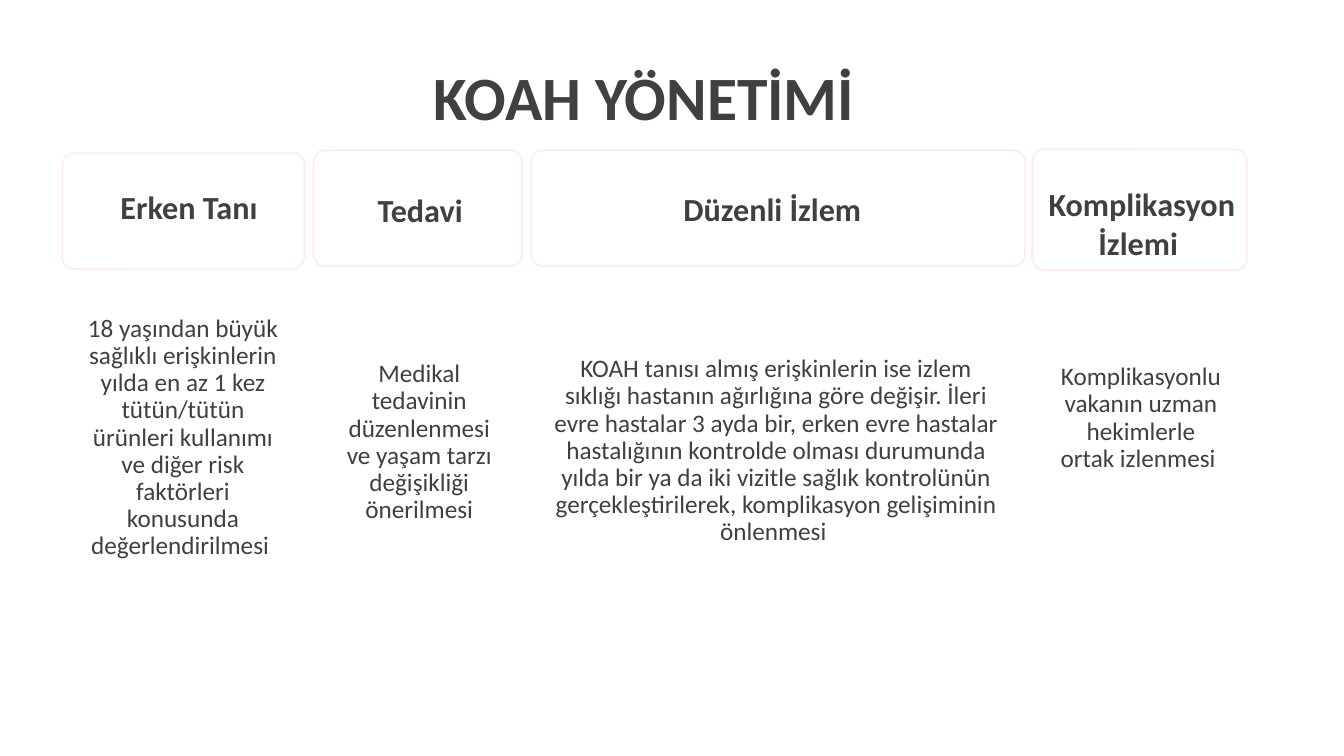
import dataclasses
import typing

import lxml.etree
import pptx
import pptx.dml.color
import pptx.enum.shapes
import pptx.enum.text
import pptx.oxml.ns
import pptx.util

Pt = pptx.util.Pt
Shape = pptx.enum.shapes.MSO_SHAPE
Anchor = pptx.enum.text.MSO_ANCHOR
CENTER = pptx.enum.text.PP_ALIGN.CENTER
Box = tuple[float, float, float, float]

WHITE = pptx.dml.color.RGBColor(0xFF, 0xFF, 0xFF)
PINK = pptx.dml.color.RGBColor(0xFF, 0xE7, 0xE7)
GRAY = pptx.dml.color.RGBColor(0x40, 0x40, 0x40)


@dataclasses.dataclass
class Column:
    head: str
    body: str
    card: Box
    panel: Box
    label: Box
    pad: float = 10
    drop: float = 62
    lead: dict[str, typing.Any] = dataclasses.field(default_factory=dict)


COLUMNS = [
    Column(
        "Erken Tanı",
        "18 yaşından büyük sağlıklı erişkinlerin yılda en az 1 kez tütün/tütün ürünleri "
        "kullanımı ve diğer risk faktörleri konusunda değerlendirilmesi ",
        (44.6, 109.4, 172.8, 82.8), (49.7, 197.3, 162, 257), (70.6, 92.2, 128.9, 114.5),
        pad=8, drop=28, lead={"line_spacing": 0.9, "space_before": Pt(10)},
    ),
    Column(
        "Tedavi",
        "Medikal tedavinin düzenlenmesi ve yaşam tarzı değişikliği önerilmesi",
        (223.9, 107.3, 149, 82.8), (229.7, 195.8, 139.7, 258.5), (229.7, 92.2, 141.1, 114.5),
    ),
    Column(
        "Düzenli İzlem ",
        "KOAH tanısı almış erişkinlerin ise izlem sıklığı hastanın ağırlığına göre değişir. "
        "İleri evre hastalar 3 ayda bir, erken evre hastalar hastalığının kontrolde olması "
        "durumunda yılda bir ya da iki vizitle sağlık kontrolünün gerçekleştirilerek, "
        "komplikasyon gelişiminin önlenmesi ",
        (379.4, 107.3, 352.8, 82.8), (378, 192.2, 352.8, 259.9), (395.3, 116.6, 318.2, 64.8),
    ),
    Column(
        "Komplikasyon İzlemi ",
        "Komplikasyonlu vakanın uzman hekimlerle ortak izlenmesi ",
        (737.3, 106.6, 153.4, 86.4), (743, 198, 144, 259.2), (739.4, 126.7, 152.6, 65.5),
    ),
]


def apply(target: typing.Any, values: dict[str, typing.Any]) -> None:
    for name, value in values.items():
        setattr(target, name, value)


def write(shape, text: str, size: float, bold: bool, frame: dict, lead: dict) -> None:
    apply(shape.text_frame, {"word_wrap": True, **frame})
    para = shape.text_frame.paragraphs[0]
    apply(para, {"alignment": CENTER, **lead})
    run = para.add_run()
    run.text = text
    apply(run.font, {"name": "Calibri", "size": Pt(size), "bold": bold})
    run.font.color.rgb = GRAY


def draw(slide, kind, box: Box, line, rounds: list[float]):
    shape = slide.shapes.add_shape(kind, *map(Pt, box))
    shape.shadow.inherit = False
    for index, value in enumerate(rounds):
        shape.adjustments[index] = value
    shape.fill.solid()
    shape.fill.fore_color.rgb = WHITE
    shape.line.color.rgb = line
    shape.line.width = Pt(1)
    return shape


def fade(shape, share: int) -> None:
    for color in shape.element.spPr.iter(pptx.oxml.ns.qn("a:srgbClr")):
        alpha = lxml.etree.SubElement(color, pptx.oxml.ns.qn("a:alpha"))
        alpha.set("val", str(share * 1000))


def label(slide, box: Box, text: str, size: float, frame: dict, lead: dict) -> None:
    shape = slide.shapes.add_textbox(*map(Pt, box))
    write(shape, text, size, True, frame, lead)


def main() -> None:
    deck = pptx.Presentation()
    apply(deck, {"slide_width": Pt(960), "slide_height": Pt(540)})
    slide = deck.slides.add_slide(deck.slide_layouts[6])

    # Title
    label(slide, (100, 38.9, 720, 60.5), "KOAH YÖNETİMİ", 44, {}, {})

    # Cards with the body panels below them
    for col in COLUMNS:
        card = draw(slide, Shape.ROUNDED_RECTANGLE, col.card, PINK, [0.1])
        fade(card, 90)
        panel = draw(slide, Shape.ROUND_2_SAME_RECTANGLE, col.panel, WHITE, [0, 0.105])
        pad = Pt(col.pad)
        frame = {
            "vertical_anchor": Anchor.TOP, "margin_top": Pt(col.drop),
            "margin_left": pad, "margin_right": pad, "margin_bottom": pad,
        }
        write(panel, col.body, 18, False, frame, {"line_spacing": 0.9})

    # Headings on the cards
    for col in COLUMNS:
        label(slide, col.label, col.head, 23, {"vertical_anchor": Anchor.MIDDLE}, col.lead)

    deck.save("out.pptx")


if __name__ == "__main__":
    main()
